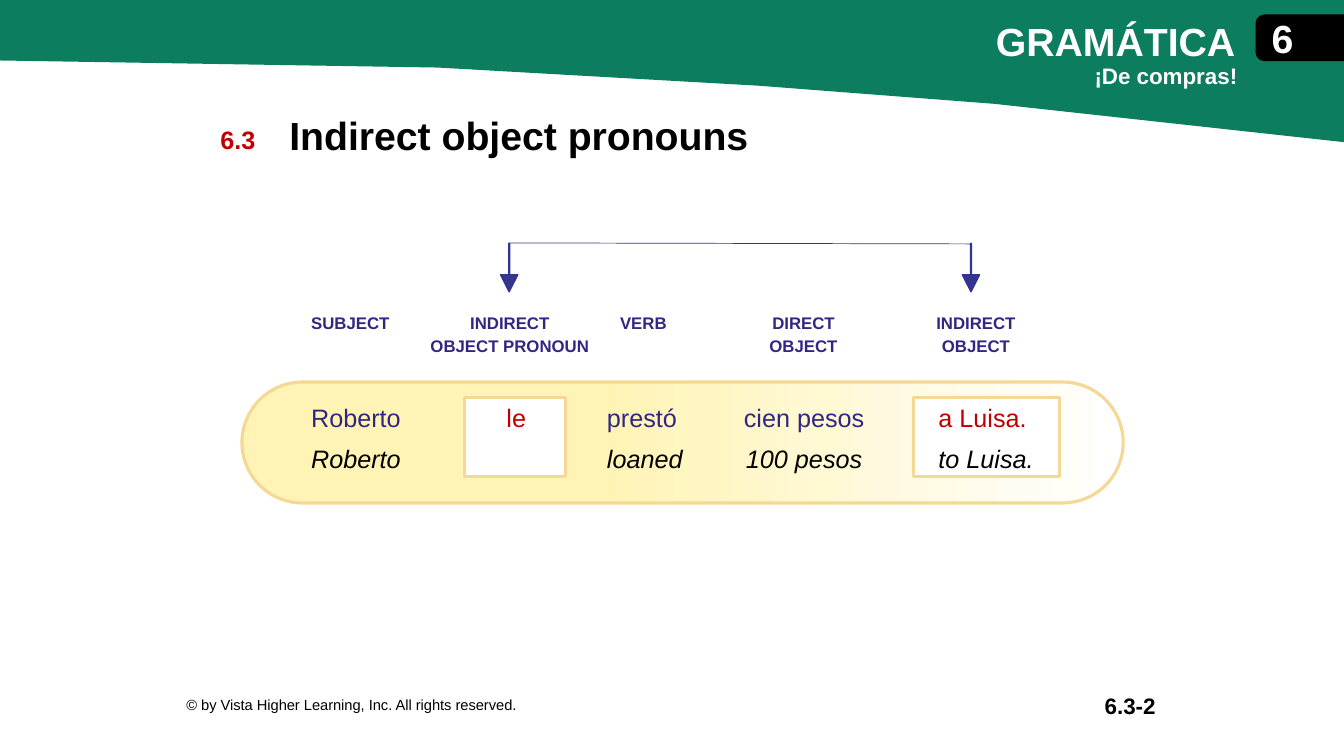
import pptx
import pptx.util
import pptx.dml.color
import pptx.enum.shapes
import pptx.enum.text
import pptx.oxml.ns
import lxml.etree

PX = 9144  # EMU per px, 100 px to the inch
RGB = pptx.dml.color.RGBColor
GREEN = RGB(0x0C, 0x7D, 0x5E)
BLACK = RGB(0, 0, 0)
WHITE = RGB(0xFF, 0xFF, 0xFF)
RED = RGB(0xC0, 0, 0)
PURPLE = RGB(0x31, 0x27, 0x83)
ARROW_FILL = RGB(0x34, 0x35, 0x8E)
ARROW_LINE = RGB(0x33, 0x34, 0x8E)
CREAM = RGB(0xFF, 0xF4, 0xB6)
GOLD = RGB(0xF5, 0xD8, 0x94)
SHAPE = pptx.enum.shapes.MSO_SHAPE
ALIGN = pptx.enum.text.PP_ALIGN
ANCHOR = pptx.enum.text.MSO_ANCHOR
LEFT, CENTER, RIGHT = ALIGN.LEFT, ALIGN.CENTER, ALIGN.RIGHT
qn = pptx.oxml.ns.qn

deck = pptx.Presentation()
deck.slide_width, deck.slide_height = 1333 * PX, 750 * PX
page = deck.slides.add_slide(deck.slide_layouts[5])


def write(frame, text, align, size, color, bold=False, italic=False, after=0):
    for index, line in enumerate(text.split("\n")):
        para = frame.paragraphs[0] if index == 0 else frame.add_paragraph()
        para.alignment = align
        para.space_after = pptx.util.Pt(after)
        span = para.add_run()
        span.text = line
        look = {"name": "Arial", "size": pptx.util.Pt(size), "bold": bold, "italic": italic}
        for key, value in look.items():
            setattr(span.font, key, value)
        span.font.color.rgb = color


def draw(kind, bounds, fill, line, weight, adjustments=(), rotation=0):
    shape = page.shapes.add_shape(kind, *[n * PX for n in bounds])
    shape.shadow.inherit = False
    shape.rotation = rotation
    for index, value in enumerate(adjustments):
        shape.adjustments[index] = value
    shape.fill.solid()
    shape.fill.fore_color.rgb = fill
    shape.line.color.rgb = line
    shape.line.width = pptx.util.Pt(weight)
    return shape


# Green banner and black chapter tab
builder = page.shapes.build_freeform(1333, 141, scale=PX)
builder.add_line_segments([(986, 103), (752, 85), (434, 67), (0, 60), (0, -1), (1333, 0)])
banner = builder.convert_to_shape()
banner.shadow.inherit = False
banner.fill.solid()
banner.fill.fore_color.rgb = GREEN
banner.line.fill.background()
draw(SHAPE.ROUND_2_SAME_RECTANGLE, (1267, -6, 45, 87), BLACK, BLACK, 1, (0.178, 0), 270)

# Title
title = page.shapes.title
title.left, title.top, title.width, title.height = [n * PX for n in (277, 105, 828, 57)]
title.text_frame.vertical_anchor = ANCHOR.TOP
title.text_frame.auto_size = pptx.enum.text.MSO_AUTO_SIZE.NONE
write(title.text_frame, "Indirect object pronouns", LEFT, 28, BLACK, True)

# Header, section number and footer texts
labels = [
    ("GRAMÁTICA", (978, 12, 355, 57), ANCHOR.TOP, LEFT, 28, WHITE, True),
    ("¡De compras!", (1059, 57, 178, 37), ANCHOR.TOP, RIGHT, 16, WHITE, True),
    ("6", (1250, 18, 44, 40), ANCHOR.MIDDLE, CENTER, 28, WHITE, True),
    ("6.3", (195, 118, 82, 40), ANCHOR.MIDDLE, CENTER, 18, RED, True),
    ("6.3-2", (855, 682, 301, 35), ANCHOR.MIDDLE, RIGHT, 16, BLACK, True),
    ("© by Vista Higher Learning, Inc. All rights reserved.",
     (175, 682, 645, 35), ANCHOR.MIDDLE, LEFT, 10.5, BLACK, False),
]
for text, bounds, anchor, align, size, color, bold in labels:
    box = page.shapes.add_textbox(*[n * PX for n in bounds])
    box.text_frame.word_wrap = True
    box.text_frame.vertical_anchor = anchor
    write(box.text_frame, text, align, size, color, bold)

# Sentence capsule with its two highlighted boxes
capsule = draw(SHAPE.ROUNDED_RECTANGLE, (240, 379, 874, 120), CREAM, GOLD, 2.25, (0.5,))
capsule.fill.gradient()
capsule.fill.gradient_angle = 0
for stop, (position, color) in zip(capsule.fill.gradient_stops, [(0.41, CREAM), (1, WHITE)]):
    stop.position = position
    stop.color.rgb = color
for left, width in [(461, 100), (906, 145)]:
    draw(SHAPE.RECTANGLE, (left, 394, width, 79), WHITE, GOLD, 2.25)

# Bracket linking pronoun and object
for left in (481, 939):
    draw(SHAPE.RIGHT_ARROW, (left, 257, 48, 17), ARROW_FILL, ARROW_LINE, 1, (0.055, 0.995), 90)
bracket = page.shapes.add_connector(
    pptx.enum.shapes.MSO_CONNECTOR.STRAIGHT, 505 * PX, 241 * PX, 963 * PX, 242 * PX)
bracket.line.color.rgb = ARROW_LINE
bracket.line.width = pptx.util.Pt(0.5)
lxml.etree.SubElement(bracket._element.spPr, qn("a:effectLst"))

# Tables: cells are (text, color); columns are (width, left inset, right inset, alignment)
tables = [
    {"bounds": (254, 307, 826, 49), "size": 12, "bold": True,
     "columns": [(167, 30, 30, RIGHT), (174, 0, 0, CENTER), (143, 20, 20, LEFT),
                 (138, 10, 30, CENTER), (204, 10, 30, CENTER)],
     "rows": [[("SUBJECT ", PURPLE), ("INDIRECT \nOBJECT PRONOUN ", PURPLE), ("VERB", PURPLE),
               ("DIRECT\nOBJECT", PURPLE), ("INDIRECT\nOBJECT", PURPLE)]]},
    {"bounds": (294, 396, 749, 92), "size": 18, "bold": False,
     "columns": [(158, 10, 50, CENTER), (140, 10, 30, CENTER), (120, 10, 30, LEFT),
                 (181, 20, 30, CENTER), (150, 30, 10, CENTER)],
     "rows": [[("Roberto", PURPLE), ("le", RED), ("prestó", PURPLE),
               ("cien pesos", PURPLE), ("a Luisa. ", RED)],
              [("Roberto", BLACK), ("", BLACK), ("loaned", BLACK),
               ("100 pesos", BLACK), ("to Luisa.", BLACK)]]},
]
for data in tables:
    rows, columns = data["rows"], data["columns"]
    table = page.shapes.add_table(
        len(rows), len(columns), *[n * PX for n in data["bounds"]]).table
    table.first_row = table.horz_banding = False
    # Plain style without grid lines
    style = table._tbl.tblPr.find(qn("a:tableStyleId"))
    style.text = "{2D5ABB26-0587-4C30-8999-92F81FD0307C}"
    for number, (width, left, right, align) in enumerate(columns):
        table.columns[number].width = width * PX
        for row, cells in enumerate(rows):
            cell = table.cell(row, number)
            cell.fill.background()
            cell.margin_left, cell.margin_right = left * PX, right * PX
            cell.margin_top = 0 if row else 5 * PX
            text, color = cells[number]
            write(cell.text_frame, text, align, data["size"], color, data["bold"], row == 1, 3)

deck.save("out.pptx")
